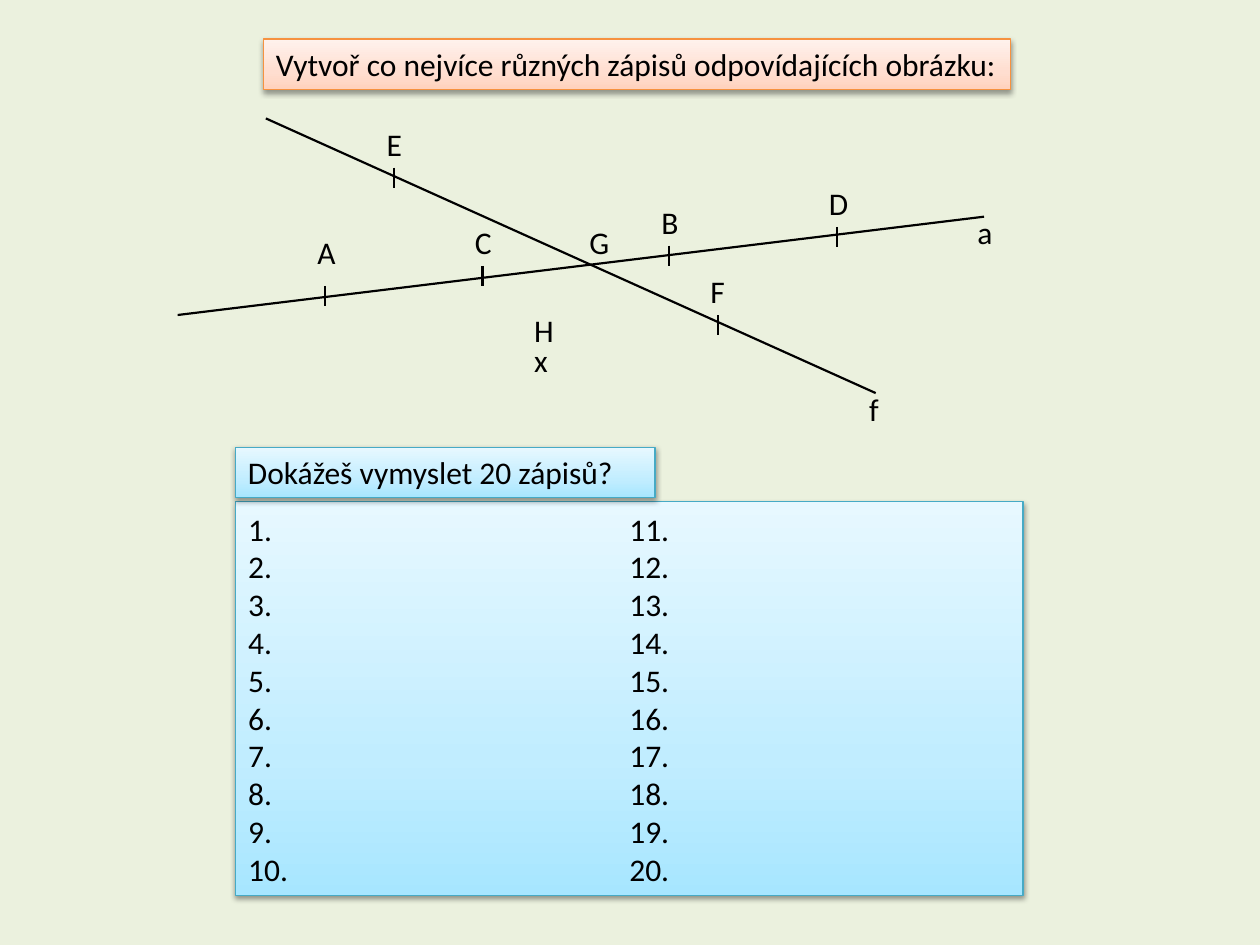
from copy import deepcopy
from dataclasses import dataclass

from lxml.etree import SubElement
from pptx import Presentation
from pptx.dml.color import RGBColor
from pptx.enum.shapes import MSO_CONNECTOR, MSO_SHAPE
from pptx.enum.text import MSO_ANCHOR, MSO_AUTO_SIZE, PP_ALIGN
from pptx.oxml.ns import qn
from pptx.util import Inches, Pt


@dataclass(frozen=True)
class Theme:
    background: str = "EBF1DE"
    ink: str = "000000"
    orange_line: str = "F69240"
    orange_stops: tuple = ((0, "FFD2BD"), (0.35, "FFDED0"), (1, "FFF2ED"))
    blue_line: str = "46AAC5"
    blue_stops: tuple = ((0, "A7E6FF"), (0.35, "C1EDFF"), (1, "E7F8FF"))
    font: str = "Calibri"
    text_size: float = 18
    list_pitch: float = 21.6
    drawing_width: float = 1.25
    border_width: float = 0.75


class Worksheet:
    """Holds the theme and the current slide, and adds each kind of element."""

    def __init__(self, slide, theme):
        self.slide = slide
        self.theme = theme
        background = slide.background.fill
        background.solid()
        background.fore_color.rgb = RGBColor.from_string(theme.background)

    def place(self, shape, left, top, width, height):
        shape.left, shape.top = Inches(left), Inches(top)
        shape.width, shape.height = Inches(width), Inches(height)

    def set_text(self, shape, text, wrap=True, anchor=MSO_ANCHOR.TOP):
        frame = shape.text_frame
        frame.text = text
        frame.word_wrap = wrap
        frame.auto_size = MSO_AUTO_SIZE.NONE
        frame.vertical_anchor = anchor
        for paragraph in frame.paragraphs:
            paragraph.alignment = PP_ALIGN.LEFT
            paragraph.space_before = Pt(0)
            for run in paragraph.runs:
                run.font.name = self.theme.font
                run.font.size = Pt(self.theme.text_size)
                run.font.color.rgb = RGBColor.from_string(self.theme.ink)

    def panel_style(self, shape, stops, border):
        fill = shape.fill
        fill.gradient()
        fill.gradient_angle = 90
        properties = shape.element.spPr
        stop_list = properties.find(qn("a:gradFill")).find(qn("a:gsLst"))
        stop_list.append(deepcopy(stop_list[-1]))
        for stop, (position, color) in zip(fill.gradient_stops, stops):
            stop.position = position
            stop.color.rgb = RGBColor.from_string(color)
        shape.line.color.rgb = RGBColor.from_string(border)
        shape.line.width = Pt(self.theme.border_width)
        effects = SubElement(properties, qn("a:effectLst"))
        shadow = SubElement(effects, qn("a:outerShdw"), blurRad=str(Pt(3.1)),
                            dist=str(Pt(1.6)), dir="5400000", rotWithShape="0")
        tint = SubElement(shadow, qn("a:srgbClr"), val=self.theme.ink)
        SubElement(tint, qn("a:alpha"), val="38000")

    def title(self, text, *box):
        heading = self.slide.shapes.title
        self.place(heading, *box)
        self.panel_style(heading, self.theme.orange_stops, self.theme.orange_line)
        self.set_text(heading, text, wrap=False)

    def answer_list(self, count, *box):
        answers = self.slide.placeholders[1]
        self.place(answers, *box)
        self.panel_style(answers, self.theme.blue_stops, self.theme.blue_line)
        numbers = "\n".join(f"{number}." for number in range(1, count + 1))
        self.set_text(answers, numbers, anchor=MSO_ANCHOR.MIDDLE)
        answers.text_frame._txBody.bodyPr.set("numCol", "2")
        for paragraph in answers.text_frame.paragraphs:
            paragraph.line_spacing = Pt(self.theme.list_pitch)
            properties = paragraph._p.get_or_add_pPr()
            properties.set("marL", "0")
            properties.set("indent", "0")
            SubElement(properties, qn("a:buNone"))

    def caption(self, text, *box):
        question = self.slide.shapes.add_shape(MSO_SHAPE.RECTANGLE, 0, 0, 0, 0)
        self.place(question, *box)
        self.panel_style(question, self.theme.blue_stops, self.theme.blue_line)
        self.set_text(question, text)

    def line(self, *ends):
        segment = self.slide.shapes.add_connector(
            MSO_CONNECTOR.STRAIGHT, *(Inches(value) for value in ends))
        segment.line.color.rgb = RGBColor.from_string(self.theme.ink)
        segment.line.width = Pt(self.theme.drawing_width)
        SubElement(segment.element.spPr, qn("a:effectLst"))

    def label(self, text, left, top):
        name = self.slide.shapes.add_textbox(
            Inches(left), Inches(top), Inches(0.36), Inches(0.4))
        self.set_text(name, text, wrap=False)

    def point(self, name, x, top, rise=0.39):
        self.line(x, top, x, top + 0.16)
        self.label(name, x - 0.16, top - rise)


def main():
    deck = Presentation()
    deck.slide_width, deck.slide_height = Inches(10), Inches(7.5)
    sheet = Worksheet(deck.slides.add_slide(deck.slide_layouts[1]), Theme())

    sheet.title("Vytvoř co nejvíce různých zápisů odpovídajících obrázku:",
                2.09, 0.31, 5.93, 0.4)
    sheet.answer_list(20, 1.87, 3.98, 6.25, 3.13)
    sheet.caption("Dokážeš vymyslet 20 zápisů?", 1.87, 3.55, 3.33, 0.4)

    sheet.line(1.41, 2.5, 7.81, 1.72)
    sheet.line(2.11, 0.94, 6.95, 3.12)

    sheet.point("A", 2.58, 2.27, rise=0.47)
    for name, x, top in (("B", 5.31, 1.95), ("C", 3.83, 2.11), ("D", 6.64, 1.8),
                         ("E", 3.13, 1.33), ("F", 5.7, 2.5)):
        sheet.point(name, x, top)

    for name, left, top in (("a", 7.66, 1.64), ("f", 6.8, 3.05), ("G", 4.58, 1.72),
                            ("x", 4.14, 2.66), ("H", 4.14, 2.42)):
        sheet.label(name, left, top)

    deck.save("out.pptx")


if __name__ == "__main__":
    main()
